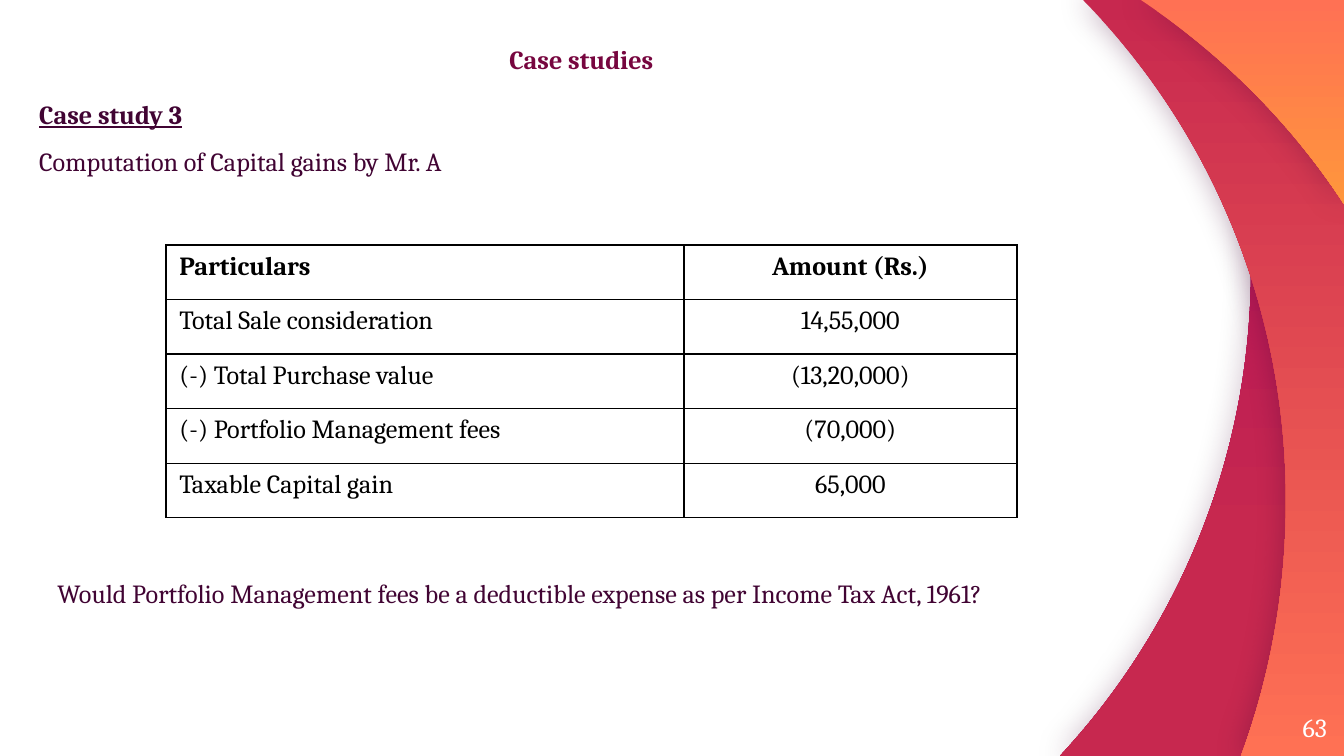
import lxml.etree
import pptx
import pptx.dml.color
import pptx.enum.text
import pptx.oxml
import pptx.oxml.ns
import pptx.util

RGB = pptx.dml.color.RGBColor
ALIGN = pptx.enum.text.PP_ALIGN
ANCHOR = pptx.enum.text.MSO_ANCHOR
AUTO_SIZE = pptx.enum.text.MSO_AUTO_SIZE

SLIDE_W, SLIDE_H = 1344, 756
EMU_PER_PX = 914400 / 134.4

WHITE = RGB(0xFF, 0xFF, 0xFF)
BLACK = RGB(0x00, 0x00, 0x00)
PLUM = RGB(0x41, 0x04, 0x33)
WINE = RGB(0x77, 0x06, 0x3F)
MAGENTA = RGB(0xAC, 0x0C, 0x5C)
CRIMSON = RGB(0xC7, 0x28, 0x4F)
CORAL = RGB(0xFF, 0x71, 0x54)
ORANGE = RGB(0xFF, 0x96, 0x3C)

BASE_FONT = {"name": "Cambria", "size": pptx.util.Pt(14), "bold": False}

# Each wave: start, cubic curves, closing corners, gradient stops, shadow opacity
WAVES = [
    ((1199, 0),
     [((1234, 86), (1251, 176), (1251, 269)),
      ((1251, 457), (1179, 628), (1060, 756))],
     [(SLIDE_W, SLIDE_H), (SLIDE_W, 0)],
     [(0, MAGENTA), (0.72, CRIMSON)], 25),
    ((1083, 0),
     [((1210, 129), (1286, 306), (1286, 501)),
      ((1286, 589), (1271, 675), (1241, 756))],
     [(SLIDE_W, SLIDE_H), (SLIDE_W, 0)],
     [(0, CRIMSON), (1, CORAL)], 35),
    ((1141, 0),
     [((1222, 54), (1292, 124), (1344, 204))],
     [(SLIDE_W, 0)],
     [(0, CORAL), (1, ORANGE)], 30),
]

GAINS = [
    ("Particulars", "Amount (Rs.)"),
    ("Total Sale consideration", "14,55,000"),
    ("(-) Total Purchase value", "(13,20,000)"),
    ("(-) Portfolio Management fees", "(70,000)"),
    ("Taxable Capital gain", "65,000"),
]


def px(length):
    return pptx.util.Emu(round(length * EMU_PER_PX))


def set_all(target, values):
    for name, value in values.items():
        setattr(target, name, value)


def place(shape, left, top, width, height):
    set_all(shape, {"left": px(left), "top": px(top),
                    "width": px(width), "height": px(height)})


def write(paragraph, text, color, align=ALIGN.LEFT, spacing=None, **font):
    run = paragraph.add_run()
    run.text = text
    set_all(run.font, {**BASE_FONT, **font})
    run.font.color.rgb = color
    set_all(paragraph, {"alignment": align, "line_spacing": spacing})


def remove_margins(frame):
    set_all(frame, {f"margin_{side}": 0
                    for side in ("left", "top", "right", "bottom")})


def add_text_frame(slide, box, **frame_format):
    frame = slide.shapes.add_textbox(*map(px, box)).text_frame
    set_all(frame, {"word_wrap": True, **frame_format})
    return frame


def bend_segments(shape, curve_count):
    """Turn each leading group of three line segments into one cubic curve."""
    qn = pptx.oxml.ns.qn
    segments = list(shape._element.spPr.iter(qn("a:lnTo")))
    for first in range(0, 3 * curve_count, 3):
        curve = lxml.etree.Element(qn("a:cubicBezTo"))
        segments[first].addprevious(curve)
        for segment in segments[first:first + 3]:
            curve.append(segment[0])
            segment.getparent().remove(segment)


def add_shadow(shape, opacity):
    shape.shadow.inherit = False
    effects = shape._element.spPr.find(pptx.oxml.ns.qn("a:effectLst"))
    effects.append(pptx.oxml.parse_xml(
        f'<a:outerShdw {pptx.oxml.ns.nsdecls("a")} '
        f'blurRad="{pptx.util.Pt(16.9)}" algn="ctr" rotWithShape="0">'
        f'<a:srgbClr val="{PLUM}"><a:alpha val="{opacity * 1000}"/></a:srgbClr>'
        '</a:outerShdw>'))


def add_wave(slide, start, curves, corners, stops, opacity):
    points = [point for curve in curves for point in curve] + corners
    outline = slide.shapes.build_freeform(*map(px, start), scale=1.0)
    outline.add_line_segments([(px(x), px(y)) for x, y in points], close=True)
    wave = outline.convert_to_shape()
    bend_segments(wave, len(curves))
    wave.line.fill.background()
    wave.fill.gradient()
    wave.fill.gradient_angle = 270
    for stop, (position, color) in zip(wave.fill.gradient_stops, stops):
        stop.position = position
        stop.color.rgb = color
    add_shadow(wave, opacity)


def add_borders(cell):
    properties = cell._tc.get_or_add_tcPr()
    for index, side in enumerate(("lnL", "lnR", "lnT", "lnB")):
        properties.insert(index, pptx.oxml.parse_xml(
            f'<a:{side} {pptx.oxml.ns.nsdecls("a")} w="{pptx.util.Pt(0.75)}">'
            f'<a:solidFill><a:srgbClr val="{BLACK}"/></a:solidFill></a:{side}>'))


def add_gains_table(slide, box, column_widths):
    table = slide.shapes.add_table(len(GAINS), len(column_widths),
                                   *map(px, box)).table
    set_all(table, {"first_row": False, "horz_banding": False})
    for column, width in zip(table.columns, column_widths):
        column.width = px(width)
    for row_index, entries in enumerate(GAINS):
        for column_index, entry in enumerate(entries):
            cell = table.cell(row_index, column_index)
            cell.fill.background()
            add_borders(cell)
            write(cell.text_frame.paragraphs[0], entry, BLACK,
                  ALIGN.CENTER if column_index else ALIGN.LEFT,
                  bold=row_index == 0)


def add_title(slide):
    title = slide.shapes.title
    place(title, 43, 0, 1077, 75)
    frame = title.text_frame
    remove_margins(frame)
    set_all(frame, {"vertical_anchor": ANCHOR.BOTTOM, "word_wrap": True,
                    "auto_size": AUTO_SIZE.NONE})
    write(frame.paragraphs[0], "Case studies", WINE, ALIGN.CENTER, 0.9, bold=True)


def main():
    deck = pptx.Presentation()
    set_all(deck, {"slide_width": px(SLIDE_W), "slide_height": px(SLIDE_H)})
    slide = deck.slides.add_slide(deck.slide_layouts.get_by_name("Title Only"))
    slide.background.fill.solid()
    slide.background.fill.fore_color.rgb = WHITE

    # Waves on the right edge
    for wave in WAVES:
        add_wave(slide, *wave)

    # Slide number
    number = add_text_frame(slide, (1246, 698, 81, 58),
                            vertical_anchor=ANCHOR.MIDDLE)
    remove_margins(number)
    write(number.paragraphs[0], "63", WHITE, ALIGN.RIGHT)

    # Title and introduction
    add_title(slide)
    intro = add_text_frame(slide, (26, 76, 1179, 150),
                           auto_size=AUTO_SIZE.SHAPE_TO_FIT_TEXT)
    write(intro.paragraphs[0], "Case study 3", PLUM, spacing=1.5,
          bold=True, underline=True)
    write(intro.add_paragraph(), "Computation of Capital gains by Mr. A",
          PLUM, spacing=1.5)

    # Capital gains and the closing question
    add_gains_table(slide, (166, 245, 851, 273), (518, 333))
    question = add_text_frame(slide, (44, 571, 1031, 46),
                              auto_size=AUTO_SIZE.SHAPE_TO_FIT_TEXT)
    write(question.paragraphs[0],
          "Would Portfolio Management fees be a deductible expense "
          "as per Income Tax Act, 1961?", PLUM)

    deck.save("out.pptx")


if __name__ == "__main__":
    main()
